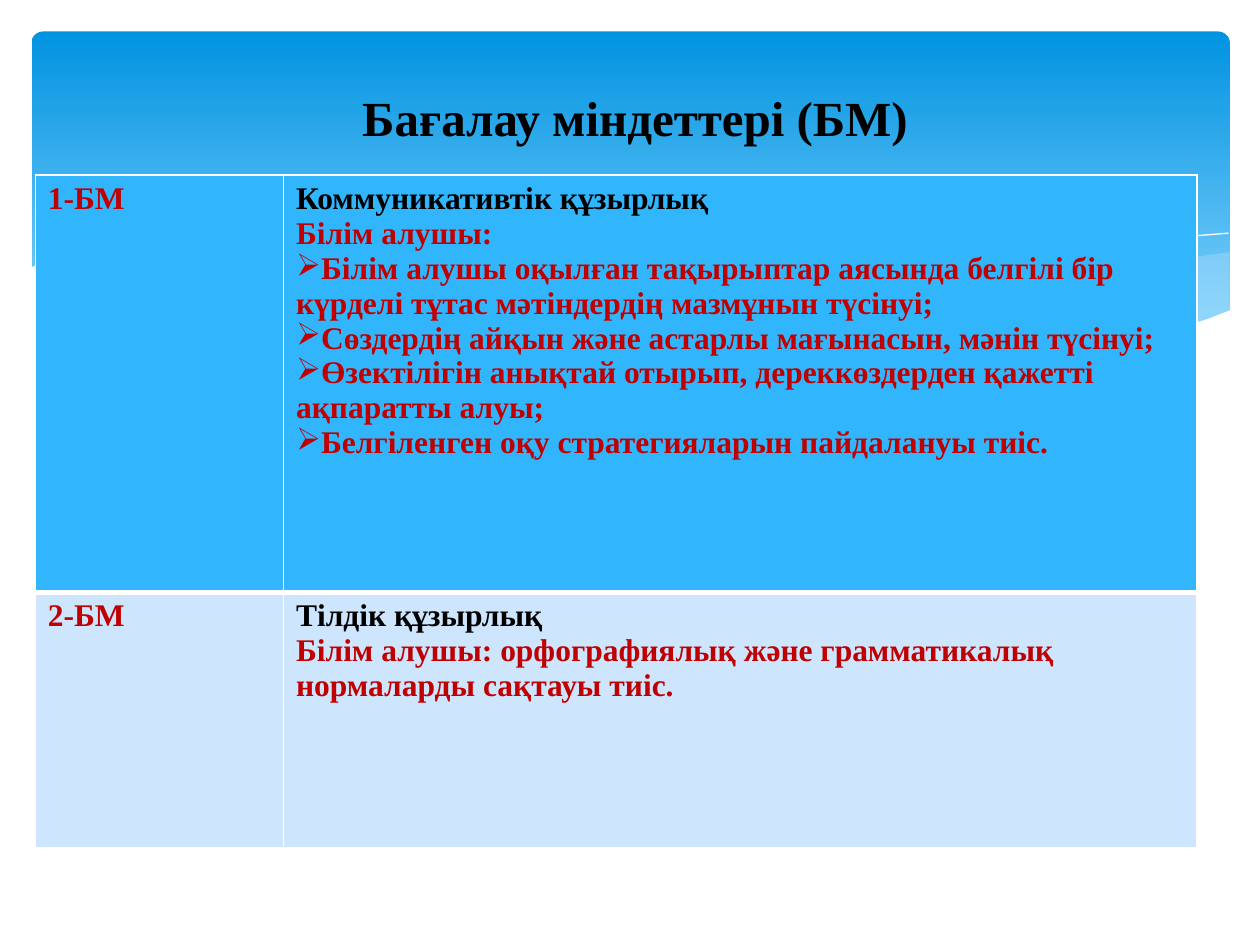
from lxml import etree
from pptx import Presentation
from pptx.dml.color import RGBColor
from pptx.enum.shapes import MSO_SHAPE
from pptx.enum.text import MSO_ANCHOR, PP_ALIGN
from pptx.oxml.ns import qn
from pptx.util import Inches, Pt

ROUNDED = MSO_SHAPE.ROUNDED_RECTANGLE
MIDDLE = MSO_ANCHOR.MIDDLE
CENTER = PP_ALIGN.CENTER

THEME = {
    "font": "Times New Roman",
    "title_size": 28, "body_size": 18,
    "black": "000000", "red": "C00000", "white": "FFFFFF", "mist": "C6E7FC",
    "sky_top": "0293E0", "sky_bottom": "83D3FE",
    "row_fills": ["31B6FD", "CEE5FE"],
}

TITLE = "Бағалау міндеттері (БМ)"
# Each row: label, competence, then (bullet, text) lines
ROWS = [
    ("1-БМ", "Коммуникативтік құзырлық", [
        ("", "Білім алушы:"),
        ("➢", "Білім алушы оқылған тақырыптар аясында белгілі бір күрделі "
              "тұтас мәтіндердің мазмұнын түсінуі;"),
        ("➢", "Сөздердің айқын және астарлы мағынасын, мәнін түсінуі;"),
        ("➢", "Өзектілігін анықтай отырып, дереккөздерден қажетті ақпаратты алуы;"),
        ("➢", "Белгіленген оқу стратегияларын пайдалануы тиіс."),
    ]),
    ("2-БМ", "Тілдік құзырлық", [
        ("", "Білім алушы: орфографиялық және грамматикалық нормаларды сақтауы тиіс."),
    ]),
]
COLUMN_WIDTHS = [1.97, 7.25]
ROW_HEIGHTS = [3.31, 2.03]

# Translucent waves: opacity in percent, outline points in inches
WAVES = [
    (29, [(9.76, 2), (9.48, 2.04), (9.21, 2.1), (8.91, 2.16), (8.61, 2.23),
          (8.05, 2.37), (7.53, 2.48), (7.06, 2.57), (6.61, 2.65), (6.91, 2.69),
          (7.32, 2.74), (7.69, 2.77), (8.03, 2.78), (8.44, 2.77), (8.81, 2.73),
          (9.13, 2.67), (9.42, 2.59), (9.63, 2.52), (9.76, 2.47)]),
    (40, [(8.93, 2.73), (8.37, 2.65), (7.75, 2.54), (7.06, 2.4), (6.29, 2.22),
          (5.84, 2.11), (5.41, 2.03), (5.02, 1.96), (4.65, 1.91), (4.2, 1.87),
          (3.8, 1.85), (3.44, 1.86), (3.13, 1.88), (2.86, 1.91), (3.23, 1.96),
          (3.62, 2.03), (4.04, 2.11), (4.49, 2.22), (5.3, 2.4), (6.01, 2.55),
          (6.5, 2.64), (6.95, 2.7), (7.36, 2.75), (7.73, 2.77), (8.07, 2.78),
          (8.48, 2.77), (8.76, 2.75)]),
]
CREST_LINES = [
    [(3.09, 1.95), (3.28, 1.92), (3.53, 1.89), (3.87, 1.87), (4.33, 1.87),
     (4.89, 1.9), (5.33, 1.94), (5.82, 2), (6.36, 2.08), (6.95, 2.19),
     (7.6, 2.33), (8.31, 2.51), (9.07, 2.72)],
    [(6.13, 2.57), (6.53, 2.46), (6.95, 2.35), (7.48, 2.23), (8.06, 2.1),
     (8.66, 1.99), (8.95, 1.94), (9.24, 1.9), (9.51, 1.87), (9.75, 1.85)],
]
WHITE_WAVE = [
    (9.77, 2.46), (9.59, 2.53), (9.4, 2.59), (9.2, 2.65), (8.99, 2.69),
    (8.75, 2.73), (8.5, 2.75), (8.09, 2.77), (7.61, 2.75), (7.08, 2.7),
    (6.48, 2.62), (5.79, 2.5), (5.03, 2.33), (4.47, 2.2), (3.91, 2.07),
    (3.4, 1.97), (2.92, 1.9), (2.5, 1.86), (2.11, 1.84), (1.77, 1.84),
    (1.46, 1.85), (1.19, 1.87), (0.95, 1.91), (0.76, 1.95), (0.59, 1.99),
    (0.46, 2.03), (0.36, 2.07), (0.23, 2.13), (0.23, 3.29), (9.77, 3.29),
]


def color(name):
    return RGBColor.from_string(THEME.get(name, name))


def add_outline(slide, points, closed=True):
    points = [(Inches(x), Inches(y)) for x, y in points]
    builder = slide.shapes.build_freeform(*points[0], scale=1.0)
    builder.add_line_segments(points[1:], close=closed)
    shape = builder.convert_to_shape()
    shape.shadow.inherit = False
    return shape


def add_wave(slide, points, fill_name, opacity=100):
    shape = add_outline(slide, points)
    shape.line.fill.background()
    shape.fill.solid()
    shape.fill.fore_color.rgb = color(fill_name)
    if opacity < 100:
        fill_color = shape.element.spPr.find(".//" + qn("a:srgbClr"))
        etree.SubElement(fill_color, qn("a:alpha"), val=str(opacity * 1000))


def add_backdrop(slide):
    panel = slide.shapes.add_shape(
        ROUNDED, Inches(0.25), Inches(0.25), Inches(9.51), Inches(2.7))
    panel.adjustments[0] = 0.034
    panel.shadow.inherit = False
    panel.line.fill.background()
    panel.fill.gradient()
    panel.fill.gradient_angle = 270
    stops = [(0, "sky_top"), (0.9, "sky_bottom")]
    for stop, (position, name) in zip(panel.fill.gradient_stops, stops):
        stop.position = position
        stop.color.rgb = color(name)

    for opacity, points in WAVES:
        add_wave(slide, points, "mist", opacity)
    for points in CREST_LINES:
        crest = add_outline(slide, points, closed=False)
        crest.fill.background()
        crest.line.color.rgb = color("white")
        crest.line.width = Pt(0)
    add_wave(slide, WHITE_WAVE, "white")


def write_paragraph(paragraph, text, size, color_name, bullet=""):
    paragraph.text = text
    if bullet:
        properties = paragraph._p.get_or_add_pPr()
        properties.set("marL", "0")
        properties.set("indent", "0")
        etree.SubElement(properties, qn("a:buChar"), char=bullet)
    font = paragraph.font
    font.name = THEME["font"]
    font.size = Pt(size)
    font.bold = True
    font.color.rgb = color(color_name)


def set_borders(cell, bottom_width):
    properties = cell._tc.get_or_add_tcPr()
    widths = {"lnL": 1, "lnR": 1, "lnT": 1, "lnB": bottom_width}
    for index, (side, width) in enumerate(widths.items()):
        line = etree.Element(qn("a:" + side), w=str(Pt(width)))
        fill = etree.SubElement(line, qn("a:solidFill"))
        etree.SubElement(fill, qn("a:srgbClr"), val=THEME["white"])
        properties.insert(index, line)


def add_competence_table(slide):
    table = slide.shapes.add_table(
        len(ROWS), len(COLUMN_WIDTHS), Inches(0.28), Inches(1.39),
        Inches(sum(COLUMN_WIDTHS)), Inches(sum(ROW_HEIGHTS))).table
    table.first_row = table.horz_banding = False
    for column, width in zip(table.columns, COLUMN_WIDTHS):
        column.width = Inches(width)

    for index, (label, competence, lines) in enumerate(ROWS):
        table.rows[index].height = Inches(ROW_HEIGHTS[index])
        contents = [
            [("", label, "red")],
            [("", competence, "black")] + [(*line, "red") for line in lines],
        ]
        for cell, paragraphs in zip(table.rows[index].cells, contents):
            cell.fill.solid()
            cell.fill.fore_color.rgb = color(THEME["row_fills"][index])
            set_borders(cell, bottom_width=3 if index == 0 else 1)
            frame = cell.text_frame
            for number, (bullet, text, color_name) in enumerate(paragraphs):
                paragraph = frame.add_paragraph() if number else frame.paragraphs[0]
                write_paragraph(paragraph, text, THEME["body_size"], color_name, bullet)


def add_title(slide):
    title = slide.shapes.title
    slide.shapes.element.append(title.element)  # in front of the backdrop
    title.left, title.top = Inches(0.73), Inches(0.2)
    title.width, title.height = Inches(8.62), Inches(1.45)
    title.text_frame.vertical_anchor = MIDDLE
    paragraph = title.text_frame.paragraphs[0]
    write_paragraph(paragraph, TITLE, THEME["title_size"], "black")
    paragraph.alignment = CENTER


def main():
    presentation = Presentation()
    presentation.slide_width, presentation.slide_height = Inches(10), Inches(7.5)
    slide = presentation.slides.add_slide(presentation.slide_layouts[5])
    add_backdrop(slide)
    add_title(slide)
    add_competence_table(slide)
    presentation.save("out.pptx")


if __name__ == "__main__":
    main()
